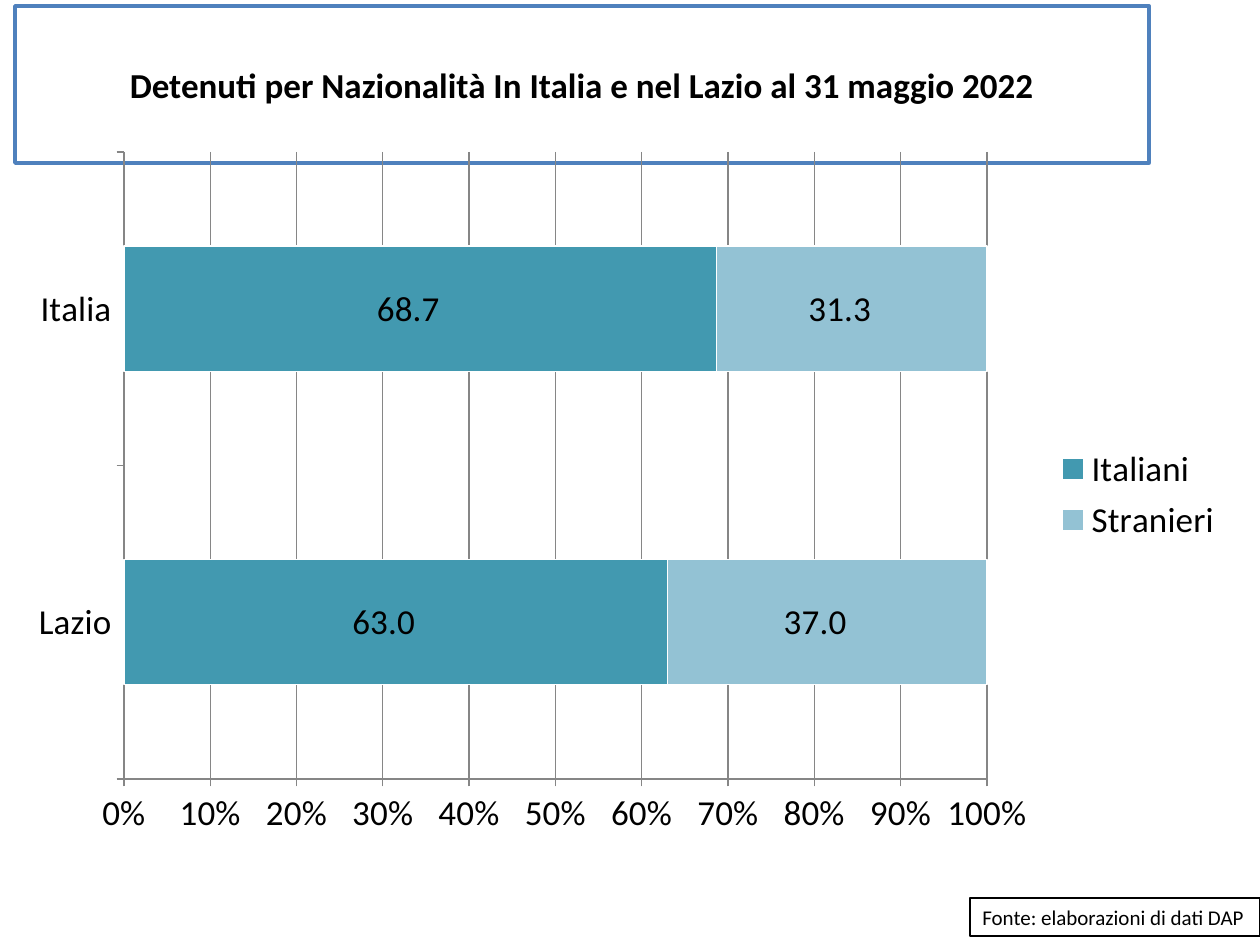
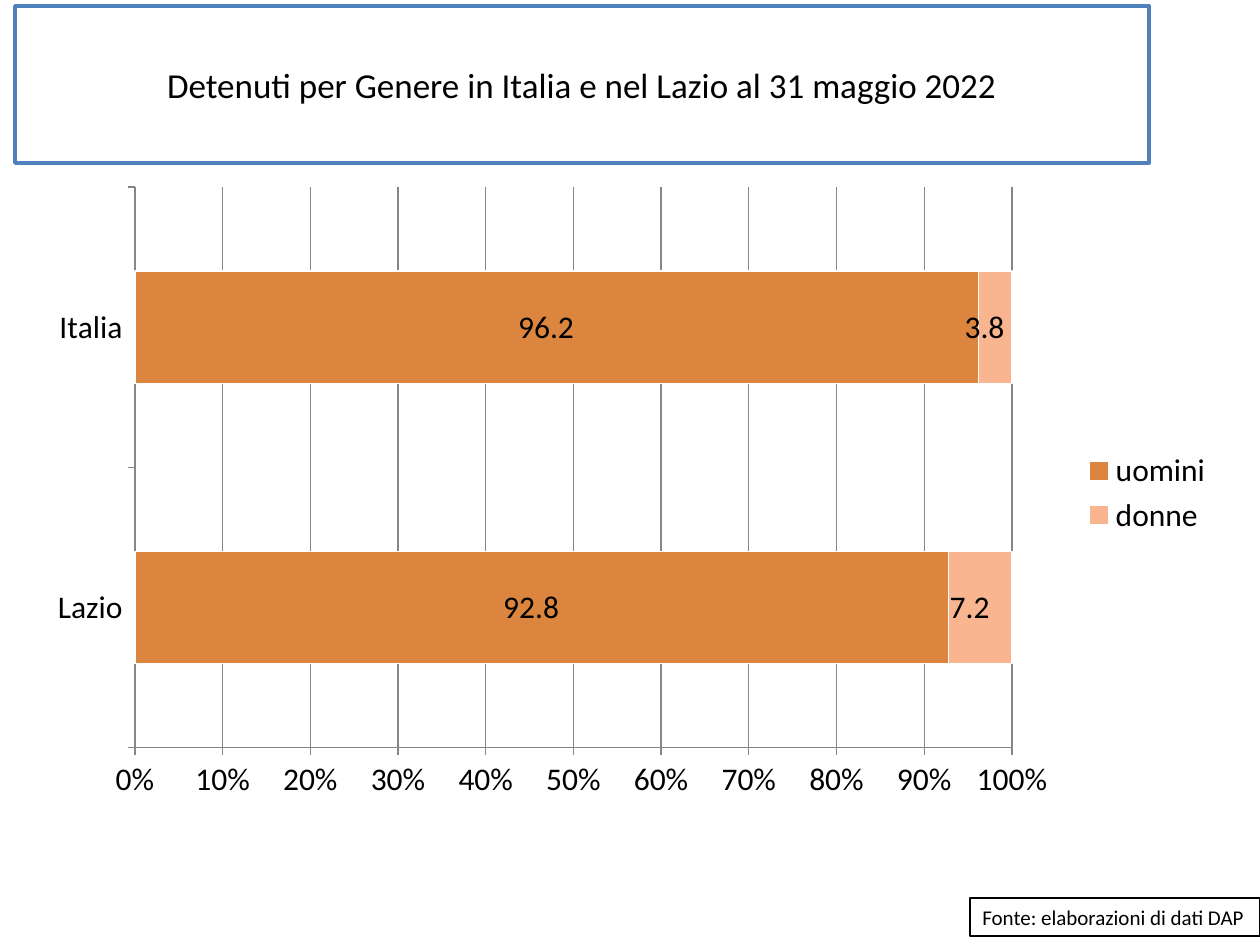
from lxml import etree
from pptx import Presentation
from pptx.chart.data import CategoryChartData
from pptx.dml.color import RGBColor
from pptx.enum.chart import (XL_CHART_TYPE, XL_LABEL_POSITION,
                             XL_LEGEND_POSITION, XL_TICK_MARK)
from pptx.enum.text import MSO_ANCHOR, PP_ALIGN
from pptx.oxml.ns import qn
from pptx.util import Pt

PX = 914400 / 126
TITLE_ONLY = 5
BAR = XL_CHART_TYPE.BAR_STACKED_100
CENTER = XL_LABEL_POSITION.CENTER
RIGHT = XL_LEGEND_POSITION.RIGHT
OUTSIDE = XL_TICK_MARK.OUTSIDE

FONT = "Calibri"
BLACK, WHITE, BLUE, GRAY = "000000", "FFFFFF", "4F81BD", "868686"
TITLE_BOX = (15, 6, 1134, 157)
SOURCE_BOX = (970, 898, 290, 38)
SOURCE = "Fonte: elaborazioni di dati DAP"
AREAS = ["Lazio", "Italia"]
VALUE_FORMAT = (r'_-* #,##0.0\ _€_-;\-* #,##0.0\ _€_-;'
                r'_-* "-"??\ _€_-;_-@_-')

SLIDES = [
    dict(title="Detenuti per Nazionalità In Italia e nel Lazio al 31 maggio 2022",
         bold=True, size=20,
         box=(15, 139, 1221, 711), plot=(124, 152, 863, 627),
         series=[("Italiani", (63.0, 68.7), "4299B0"),
                 ("Stranieri", (37.0, 31.3), "93C2D4")]),
    dict(title="Detenuti per Genere in Italia e nel Lazio al 31 maggio 2022",
         bold=False, size=18,
         box=(35, 175, 1191, 636), plot=(135, 187, 877, 561),
         series=[("uomini", (92.8, 96.2), "DC853E"),
                 ("donne", (7.2, 3.8), "F9B590")]),
]


def emu(box):
    return [round(v * PX) for v in box]


def color(value):
    return RGBColor.from_string(value)


def set_font(font, size, bold=False):
    font.name, font.size, font.bold = FONT, Pt(size), bold
    font.color.rgb = color(BLACK)


def set_line(line, value, width):
    line.color.rgb = color(value)
    line.width = Pt(width)


def frame(sp, line, width):
    sp.fill.solid()
    sp.fill.fore_color.rgb = color(WHITE)
    set_line(sp.line, line, width)


def add_title(s, text, bold):
    sp = s.shapes.title
    sp.left, sp.top, sp.width, sp.height = emu(TITLE_BOX)
    frame(sp, BLUE, 2)
    tf = sp.text_frame
    tf.text = text
    tf.vertical_anchor = MSO_ANCHOR.MIDDLE
    p = tf.paragraphs[0]
    p.alignment = PP_ALIGN.CENTER
    set_font(p.font, 20, bold)


def add_source(s):
    sp = s.shapes.add_textbox(*emu(SOURCE_BOX))
    frame(sp, BLACK, 0.75)
    p = sp.text_frame.paragraphs[0]
    p.text = SOURCE
    set_font(p.font, 12)


def place_plot(chart, box, plot):
    """Fix the inner plot area, given in slide px, inside the chart box."""
    area = chart.plots[0]._element.getparent()
    for old in area.findall(qn("c:layout")):
        area.remove(old)
    layout = etree.Element(qn("c:layout"))
    area.insert(0, layout)
    manual = etree.SubElement(layout, qn("c:manualLayout"))
    x, y, w, h = box
    settings = [("layoutTarget", "inner"), ("xMode", "edge"), ("yMode", "edge"),
                ("x", (plot[0] - x) / w), ("y", (plot[1] - y) / h),
                ("w", plot[2] / w), ("h", plot[3] / h)]
    for name, value in settings:
        etree.SubElement(manual, qn("c:" + name), val=str(value))


def style_axes(chart):
    for axis in (chart.category_axis, chart.value_axis):
        axis.major_tick_mark = OUTSIDE
        set_line(axis.format.line, GRAY, 0.75)
    axis = chart.value_axis
    axis.minimum_scale, axis.maximum_scale, axis.major_unit = 0, 1, 0.1
    axis.has_major_gridlines = True
    set_line(axis.major_gridlines.format.line, GRAY, 0.75)
    axis.tick_labels.number_format = "0%"
    axis.tick_labels.number_format_is_linked = False


def add_share_chart(s, box, plot, size, series):
    data = CategoryChartData(number_format=VALUE_FORMAT)
    data.categories = AREAS
    for name, values, _ in series:
        data.add_series(name, values)
    chart = s.shapes.add_chart(BAR, *emu(box), data).chart
    set_font(chart.font, size)
    chart.has_title = False
    chart.has_legend = True
    chart.legend.position = RIGHT
    chart.legend.include_in_layout = False
    style_axes(chart)

    bars = chart.plots[0]
    bars.gap_width, bars.overlap = 150, 100
    bars.vary_by_categories = False
    for ser, (_, _, fill) in zip(bars.series, series):
        ser.format.fill.solid()
        ser.format.fill.fore_color.rgb = color(fill)
        set_line(ser.format.line, WHITE, 0.75)
        labels = ser.data_labels
        labels.show_value = True
        labels.position = CENTER
        labels.number_format = VALUE_FORMAT
        labels.number_format_is_linked = False
        set_font(labels.font, size)
    place_plot(chart, box, plot)


def main():
    prs = Presentation()
    prs.slide_width, prs.slide_height = emu((1260, 945))
    for spec_row in SLIDES:
        s = prs.slides.add_slide(prs.slide_layouts[TITLE_ONLY])
        add_title(s, spec_row["title"], spec_row["bold"])
        add_source(s)
        add_share_chart(s, spec_row["box"], spec_row["plot"],
                        spec_row["size"], spec_row["series"])
    prs.save("out.pptx")


if __name__ == "__main__":
    main()
